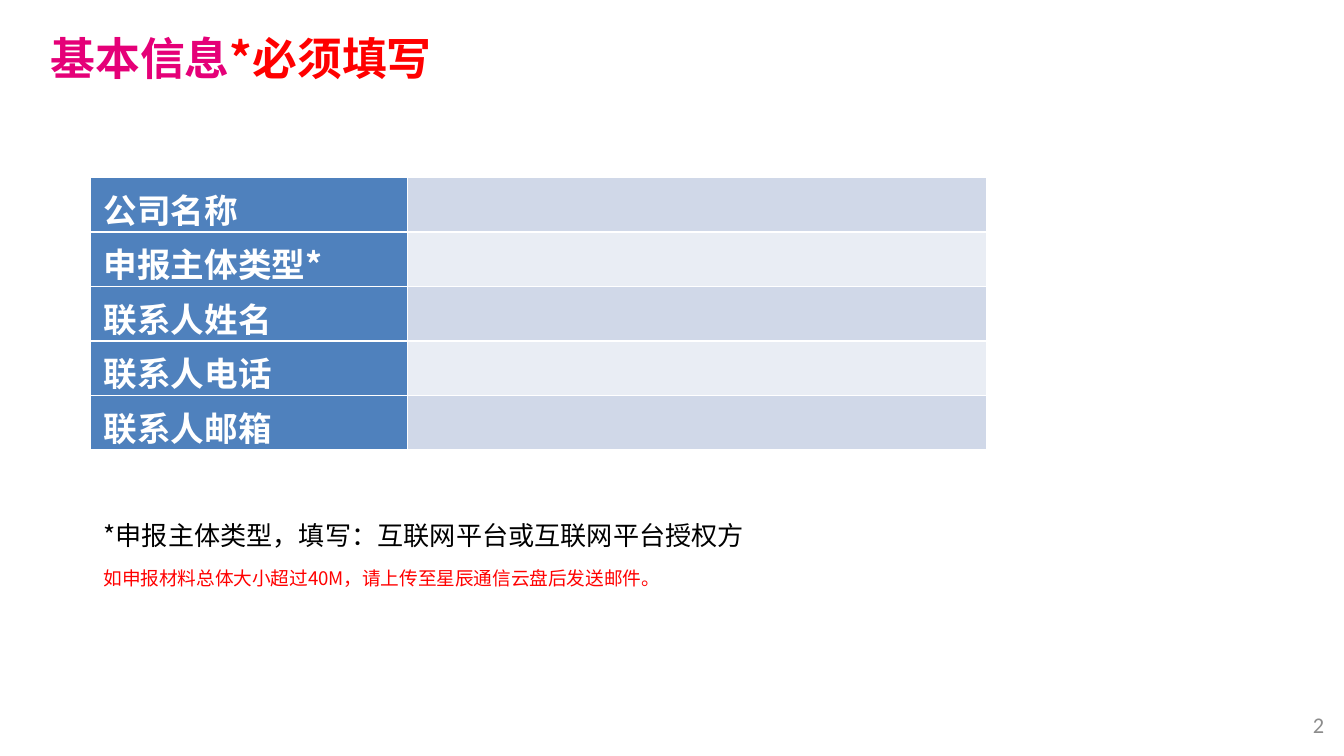
from lxml.etree import SubElement
from pptx import Presentation
from pptx.dml.color import RGBColor
from pptx.enum.text import MSO_ANCHOR, PP_ALIGN
from pptx.oxml.ns import qn
from pptx.util import Pt

CHINESE = "Noto Sans CJK SC"
LABELS = ["公司名称", "申报主体类型*", "联系人姓名", "联系人电话", "联系人邮箱"]


def color(value):
    """Turn a hex string into a colour."""
    return RGBColor.from_string(value)


def add_span(para, text, size=18, fill="000000", bold=False, font=CHINESE):
    """Add formatted text to a paragraph."""
    span = para.add_run()
    span.text = text
    span.font.size = Pt(size)
    span.font.bold = bold
    span.font.color.rgb = color(fill)
    span.font.name = font
    SubElement(span.font._element, qn("a:ea"), typeface=font)


def add_box(page, left, top, width, height, anchor=MSO_ANCHOR.TOP):
    """Add a wrapping text box and return its text frame."""
    box = page.shapes.add_textbox(Pt(left), Pt(top), Pt(width), Pt(height))
    frame = box.text_frame
    frame.word_wrap = True
    frame.vertical_anchor = anchor
    return frame


def style_cell(cell, fill):
    """Give a cell thin white borders and a solid fill."""
    properties = cell._tc.get_or_add_tcPr()
    for side in ("lnL", "lnR", "lnT", "lnB"):
        line = SubElement(properties, qn(f"a:{side}"), w=str(Pt(1)))
        SubElement(SubElement(line, qn("a:solidFill")), qn("a:srgbClr"), val="FFFFFF")
    cell.fill.solid()
    cell.fill.fore_color.rgb = color(fill)


def add_form(page):
    """Add the table of labels and empty answer cells."""
    frame = page.shapes.add_table(len(LABELS), 2, Pt(48.4), Pt(95.2), Pt(480), Pt(146))
    table = frame.table
    table.first_row = False
    table.horz_banding = False
    for column, width in zip(table.columns, (170, 310)):
        column.width = Pt(width)
    for index, label in enumerate(LABELS):
        name, answer = table.rows[index].cells
        add_span(name.text_frame.paragraphs[0], label, fill="FFFFFF", bold=True)
        style_cell(name, "4F81BD")
        style_cell(answer, "E9EDF4" if index % 2 else "D0D8E8")


def add_title(page):
    """Add the two-colour heading."""
    frame = add_box(page, 20, 15, 284, 45)
    frame.margin_top = Pt(1.5)
    para = frame.paragraphs[0]
    add_span(para, "基本信息", size=24, fill="E50078", bold=True)
    add_span(para, "*必须填写", size=24, fill="FF0000", bold=True)


def add_notes(page):
    """Add the two remarks below the form."""
    frame = add_box(page, 48.4, 274.5, 629, 51)
    add_span(frame.paragraphs[0], "*申报主体类型，填写：互联网平台或互联网平台授权方", size=14)
    para = frame.add_paragraph()
    para.space_before = Pt(9)
    add_span(para, "如申报材料总体大小超过40M，请上传至星辰通信云盘后发送邮件。", size=10, fill="FF0000")


def add_page_number(page):
    """Add the page number in the bottom right corner."""
    para = add_box(page, 692.5, 378, 24, 20, anchor=MSO_ANCHOR.MIDDLE).paragraphs[0]
    para.alignment = PP_ALIGN.RIGHT
    add_span(para, "2", size=12, fill="8C8C8C", font="Calibri")


def main():
    """Build and save the slide."""
    deck = Presentation()
    deck.slide_width, deck.slide_height = Pt(720), Pt(405)
    page = deck.slides.add_slide(deck.slide_layouts[6])
    add_title(page)
    add_form(page)
    add_notes(page)
    add_page_number(page)
    deck.save("out.pptx")


if __name__ == "__main__":
    main()
